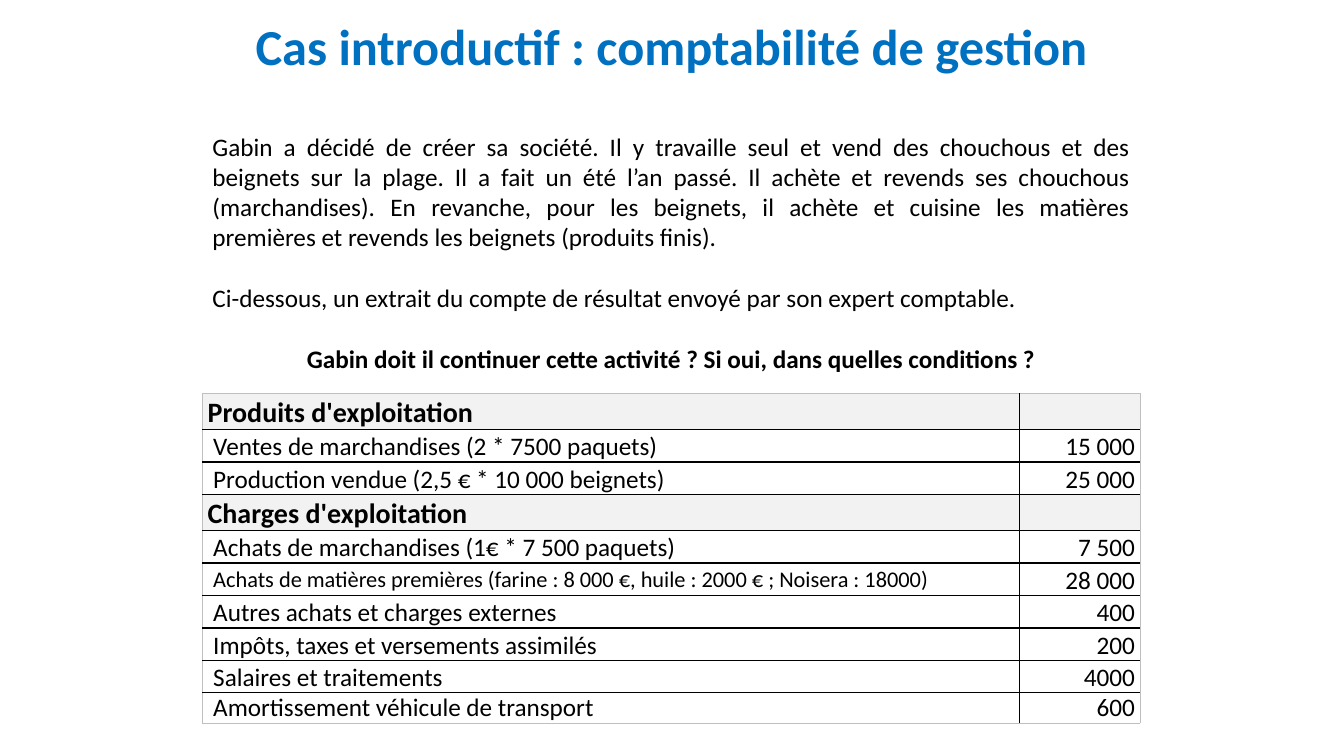
from lxml import etree
from pptx import Presentation
from pptx.dml.color import RGBColor
from pptx.enum.text import MSO_ANCHOR, PP_ALIGN
from pptx.oxml.ns import qn
from pptx.util import Pt

LEFT, CENTER, RIGHT, JUSTIFY = (
    PP_ALIGN.LEFT, PP_ALIGN.CENTER, PP_ALIGN.RIGHT, PP_ALIGN.JUSTIFY)
TOP, MIDDLE, BOTTOM = MSO_ANCHOR.TOP, MSO_ANCHOR.MIDDLE, MSO_ANCHOR.BOTTOM

COLORS = {"title": "0070C0", "text": "000000", "heading": "F2F2F2",
          "grid": "000000", "frame": "BFBFBF"}
FONT = "Calibri"

TITLE = "Cas introductif : comptabilité de gestion"
STORY = [
    ("Gabin a décidé de créer sa société. Il y travaille seul et vend des "
     "chouchous et des beignets sur la plage. Il a fait un été l’an passé. "
     "Il achète et revends ses chouchous (marchandises). En revanche, pour "
     "les beignets, il achète et cuisine les matières premières et revends "
     "les beignets (produits finis).", JUSTIFY, False),
    ("Ci-dessous, un extrait du compte de résultat envoyé par son expert "
     "comptable.", JUSTIFY, False),
    ("Gabin doit il continuer cette activité ? Si oui, dans quelles "
     "conditions ?", CENTER, True),
]
# Label, amount (None for a heading), text size
ACCOUNTS = [
    ("Produits d'exploitation", None, 20),
    ("Ventes de marchandises (2 * 7500 paquets)", "15 000", 18),
    ("Production vendue (2,5 € * 10 000 beignets)", "25 000", 18),
    ("Charges d'exploitation", None, 20),
    ("Achats de marchandises (1€ * 7 500 paquets)", "7 500", 18),
    ("Achats de matières premières (farine : 8 000 €, huile : 2000 € ; "
     "Noisera : 18000)", "28 000", 16),
    ("Autres achats et charges externes", "400", 18),
    ("Impôts, taxes et versements assimilés", "200", 18),
    ("Salaires et traitements", "4000", 18),
    ("Amortissement véhicule de transport", "600", 18),
]
HEADING_HEIGHT, ENTRY_HEIGHT, LAST_HEIGHT = 25.8, 23.2, 21.2
AMOUNT_WIDTH = 86
CELL_INSET, ENTRY_INDENT = 3.6, 4


def apply(target, values):
    for name, value in values.items():
        setattr(target, name, value)


def write(para, text, size, align, bold=False, color="text"):
    para.alignment = align
    span = para.add_run()
    span.text = text
    apply(span.font, {"name": FONT, "size": Pt(size), "bold": bold})
    span.font.color.rgb = RGBColor.from_string(COLORS[color])


def add_text_frame(page, box, values):
    frame = page.shapes.add_textbox(*map(Pt, box)).text_frame
    apply(frame, {"word_wrap": True, **values})
    return frame


def add_title(page, box):
    frame = add_text_frame(page, box, {
        "vertical_anchor": BOTTOM, "margin_left": 0, "margin_right": 0,
        "margin_bottom": 0})
    write(frame.paragraphs[0], TITLE, 36, CENTER, True, "title")


def add_story(page, box):
    frame = add_text_frame(page, box, {"vertical_anchor": TOP})
    for index, (text, align, bold) in enumerate(STORY):
        para = frame.add_paragraph() if index else frame.paragraphs[0]
        para.space_before = Pt(22 if index else 0)
        write(para, text, 18, align, bold)


def add_borders(cell, outer_sides):
    properties = cell._tc.get_or_add_tcPr()
    for position, side in enumerate("LRTB"):
        outer = side in outer_sides
        line = etree.Element(qn("a:ln" + side), w=str(Pt(0.5 if outer else 1)))
        fill = etree.SubElement(line, qn("a:solidFill"))
        etree.SubElement(fill, qn("a:srgbClr"),
                         val=COLORS["frame" if outer else "grid"])
        properties.insert(position, line)


def add_accounts(page, box):
    left, top, width, height = box
    last = len(ACCOUNTS) - 1
    table = page.shapes.add_table(
        len(ACCOUNTS), 2, *map(Pt, box)).table
    apply(table, {"first_row": False, "horz_banding": False})
    table.columns[0].width = Pt(width - AMOUNT_WIDTH)
    table.columns[1].width = Pt(AMOUNT_WIDTH)

    for index, (label, amount, size) in enumerate(ACCOUNTS):
        heading = amount is None
        table.rows[index].height = Pt(
            HEADING_HEIGHT if heading
            else LAST_HEIGHT if index == last else ENTRY_HEIGHT)
        indent = CELL_INSET if heading else CELL_INSET + ENTRY_INDENT
        row_sides = "T" * (index == 0) + "B" * (index == last)
        for column, cell in enumerate(table.rows[index].cells):
            is_label = column == 0
            apply(cell, {
                "margin_left": Pt(indent if is_label else CELL_INSET),
                "margin_right": Pt(CELL_INSET),
                "margin_top": 0, "margin_bottom": 0,
                "vertical_anchor":
                    MIDDLE if is_label and not heading else BOTTOM})
            if heading:
                cell.fill.solid()
                cell.fill.fore_color.rgb = RGBColor.from_string(
                    COLORS["heading"])
            else:
                cell.fill.background()
            add_borders(cell, row_sides + "LR"[column])
            para = cell.text_frame.paragraphs[0]
            para.line_spacing = 1 if index == last else 1.07
            if is_label:
                write(para, label, size, LEFT, heading)
            elif not heading:
                write(para, amount, 18, RIGHT)


def main():
    deck = Presentation()
    apply(deck, {"slide_width": Pt(960), "slide_height": Pt(540)})
    page = deck.slides.add_slide(deck.slide_layouts[6])
    add_title(page, (167, -36, 625.7, 90))
    add_story(page, (144.7, 90, 669.6, 203.8))
    add_accounts(page, (144.7, 281, 669.6, 235))
    deck.save("out.pptx")


if __name__ == "__main__":
    main()
